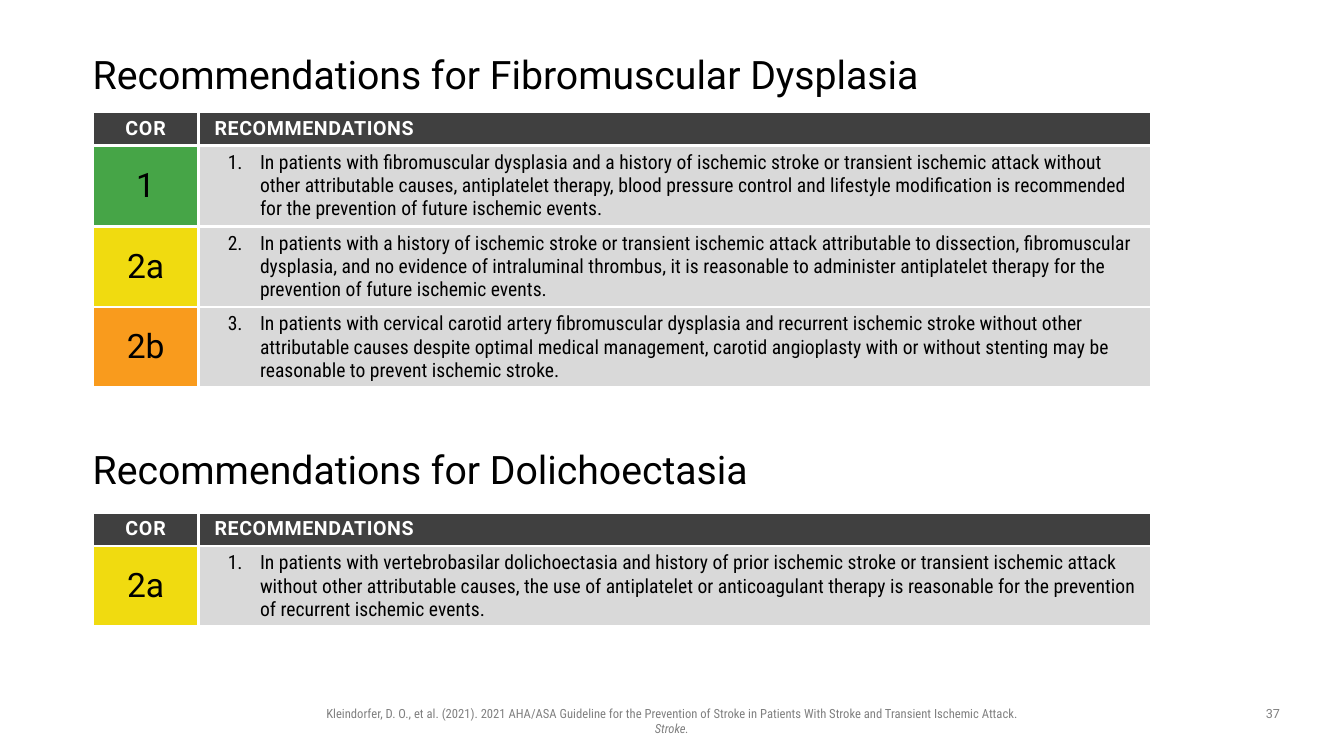
from dataclasses import dataclass

from pptx import Presentation
from pptx.dml.color import RGBColor
from pptx.enum.text import MSO_ANCHOR as Anchor, PP_ALIGN as Align
from pptx.oxml import parse_xml
from pptx.oxml.ns import nsdecls
from pptx.util import Pt

BLACK = RGBColor(0x00, 0x00, 0x00)
WHITE = RGBColor(0xFF, 0xFF, 0xFF)
GRAY = RGBColor(0x80, 0x80, 0x80)
HEADER_FILL = RGBColor(0x40, 0x40, 0x40)
ADVICE_FILL = RGBColor(0xD9, 0xD9, 0xD9)
CLASS_FILLS = {
    "1": RGBColor(0x46, 0xA5, 0x47),
    "2a": RGBColor(0xF0, 0xDB, 0x10),
    "2b": RGBColor(0xF9, 0x9B, 0x1D),
}
REGULAR, CONDENSED = "Roboto", "Roboto Condensed"

LEFT = 66.25
COLUMN_WIDTHS = (75.6, 680.4)
HEADER_HEIGHT, ROW_HEIGHT = 23.5, 57


@dataclass
class Recommendation:
    level: str
    text: str


@dataclass
class Section:
    title: str
    title_top: float
    table_top: float
    rows: list[Recommendation]


SECTIONS = [
    Section("Recommendations for Fibromuscular Dysplasia", 28.8, 80, [
        Recommendation("1", "In patients with fibromuscular dysplasia and a history of ischemic "
                       "stroke or transient ischemic attack without other attributable causes, "
                       "antiplatelet therapy, blood pressure control and lifestyle modification "
                       "is recommended for the prevention of future ischemic events."),
        Recommendation("2a", "In patients with a history of ischemic stroke or transient ischemic "
                       "attack attributable to dissection, fibromuscular dysplasia, and no evidence "
                       "of intraluminal thrombus, it is reasonable to administer antiplatelet "
                       "therapy for the prevention of future ischemic events."),
        Recommendation("2b", "In patients with cervical carotid artery fibromuscular dysplasia and "
                       "recurrent ischemic stroke without other attributable causes despite optimal "
                       "medical management, carotid angioplasty with or without stenting may be "
                       "reasonable to prevent ischemic stroke."),
    ]),
    Section("Recommendations for Dolichoectasia", 311, 366, [
        Recommendation("2a", "In patients with vertebrobasilar dolichoectasia and history of prior "
                       "ischemic stroke or transient ischemic attack without other attributable "
                       "causes, the use of antiplatelet or anticoagulant therapy is reasonable for "
                       "the prevention of recurrent ischemic events."),
    ]),
]


def set_font(para, name: str, size: float, color: RGBColor, bold: bool = False) -> None:
    font = para.font
    font.name, font.size, font.bold = name, Pt(size), bold
    font.color.rgb = color


def add_text(page, left: float, top: float, width: float, height: float):
    """Add a wrapping text box and return its frame."""
    frame = page.shapes.add_textbox(Pt(left), Pt(top), Pt(width), Pt(height)).text_frame
    frame.word_wrap = True
    return frame


def add_title(page, text: str, top: float) -> None:
    frame = add_text(page, LEFT, top, 828, 51.8)
    frame.margin_left = frame.margin_right = frame.margin_top = frame.margin_bottom = 0
    frame.vertical_anchor = Anchor.MIDDLE
    para = frame.paragraphs[0]
    para.text = text
    para.line_spacing = 0.9
    set_font(para, REGULAR, 28, BLACK)


def fill_cell(cell, text: str, fill: RGBColor):
    """Set text, fill and white borders; return the paragraph."""
    cell.text = text
    cell.vertical_anchor = Anchor.MIDDLE
    properties = cell._tc.get_or_add_tcPr()
    for side in ("lnL", "lnR", "lnT", "lnB"):
        properties.append(parse_xml(
            f'<a:{side} {nsdecls("a")} w="{Pt(2.25)}"><a:solidFill>'
            f'<a:srgbClr val="{WHITE}"/></a:solidFill></a:{side}>'))
    cell.fill.solid()
    cell.fill.fore_color.rgb = fill
    return cell.text_frame.paragraphs[0]


def indent(para, left: float, hanging: float = 0) -> None:
    properties = para._p.get_or_add_pPr()
    properties.set("marL", str(Pt(left)))
    properties.set("indent", str(-Pt(hanging)))


def number(para, start: int) -> None:
    para._p.get_or_add_pPr().append(parse_xml(
        f'<a:buAutoNum {nsdecls("a")} type="arabicPeriod" startAt="{start}"/>'))


def add_header(cell, text: str, spacing: int):
    para = fill_cell(cell, text, HEADER_FILL)
    set_font(para, REGULAR, 14, WHITE, bold=True)
    para.runs[0]._r.get_or_add_rPr().set("spc", str(spacing))
    return para


def add_recommendations(page, section: Section) -> None:
    rows = section.rows
    table = page.shapes.add_table(
        len(rows) + 1, 2, Pt(LEFT), Pt(section.table_top), Pt(sum(COLUMN_WIDTHS)),
        Pt(HEADER_HEIGHT + ROW_HEIGHT * len(rows))).table
    for column, width in zip(table.columns, COLUMN_WIDTHS):
        column.width = Pt(width)
    for index, row in enumerate(table.rows):
        row.height = Pt(ROW_HEIGHT if index else HEADER_HEIGHT)

    # Header row
    add_header(table.cell(0, 0), "COR", 50).alignment = Align.CENTER
    indent(add_header(table.cell(0, 1), "RECOMMENDATIONS", 40), 4.3)

    # Class and numbered advice
    for index, row in enumerate(rows, start=1):
        level_cell = table.cell(index, 0)
        level_cell.margin_left = level_cell.margin_right = Pt(3.6)
        para = fill_cell(level_cell, row.level, CLASS_FILLS[row.level])
        para.alignment = Align.CENTER
        set_font(para, REGULAR, 24, BLACK)

        para = fill_cell(table.cell(index, 1), row.text, ADVICE_FILL)
        indent(para, 36.7, 23)
        number(para, index)
        set_font(para, CONDENSED, 14, BLACK)


def add_footer(page) -> None:
    # Citation
    para = add_text(page, 211.7, 500.4, 536.4, 18).paragraphs[0]
    para.alignment = Align.CENTER
    set_font(para, CONDENSED, 9, GRAY)
    para.add_run().text = ("Kleindorfer, D. O., et al. (2021). 2021 AHA/ASA Guideline for the "
                           "Prevention of Stroke in Patients With Stroke and Transient "
                           "Ischemic Attack.")
    para.add_line_break()
    journal = para.add_run()
    journal.text = "Stroke."
    journal.font.italic = True

    # Page number
    para = add_text(page, 894.2, 500.4, 30.2, 18.7).paragraphs[0]
    para.text = "37"
    para.alignment = Align.CENTER
    set_font(para, REGULAR, 9, GRAY)


def main() -> None:
    deck = Presentation()
    deck.slide_width, deck.slide_height = Pt(960), Pt(540)
    page = deck.slides.add_slide(deck.slide_layouts[6])
    for section in SECTIONS:
        add_title(page, section.title, section.title_top)
        add_recommendations(page, section)
    add_footer(page)
    deck.save("out.pptx")


if __name__ == "__main__":
    main()
